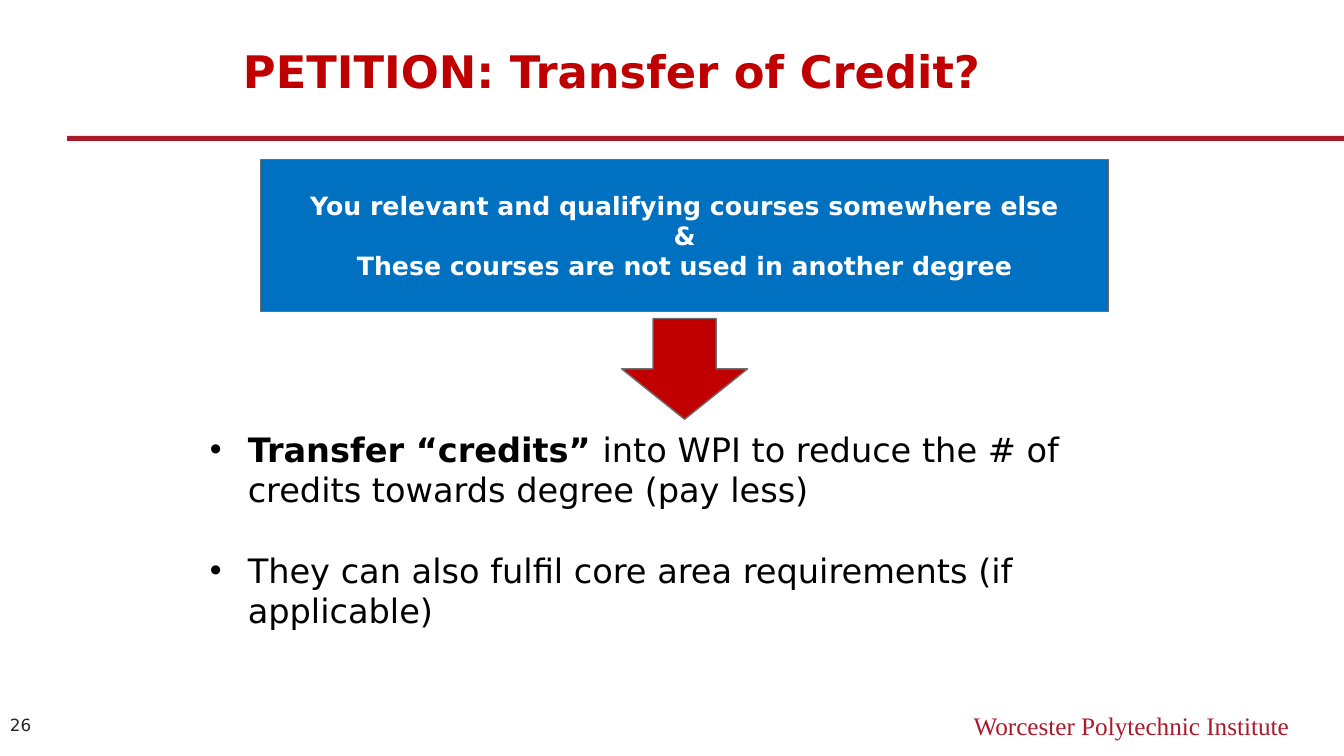
from lxml import etree
from pptx import Presentation
from pptx.dml.color import RGBColor
from pptx.enum import shapes, text
from pptx.oxml import ns
from pptx.util import Pt

CRIMSON = RGBColor(0xAB, 0x19, 0x2D)
RED = RGBColor(0xC0, 0x00, 0x00)
BLUE = RGBColor(0x00, 0x70, 0xC0)
GREY = RGBColor(0x6D, 0x6D, 0x6D)
CHARCOAL = RGBColor(0x26, 0x26, 0x26)
WHITE = RGBColor(0xFF, 0xFF, 0xFF)
BLACK = RGBColor(0x00, 0x00, 0x00)

TITLE = "PETITION: Transfer of Credit?"
CONDITIONS = [
    "You relevant and qualifying courses somewhere else",
    "&",
    "These courses are not used in another degree",
]
BENEFITS = [
    [("Transfer “credits” ", True),
     ("into WPI to reduce the # of credits towards degree (pay less)", False)],
    [("They can also fulfil core area requirements (if applicable)", False)],
]
INSTITUTE = "Worcester Polytechnic Institute"
PAGE = "26"

SLIDE_W, SLIDE_H = 960, 540
RULE_LEFT = 48
CONDITION_BOX = (186, 113.75, 606, 109)
ARROW_W, ARROW_H, ARROW_TOP = 90, 72, 227.5

deck = Presentation()
deck.slide_width, deck.slide_height = Pt(SLIDE_W), Pt(SLIDE_H)
slide = deck.slides.add_slide(deck.slide_layouts[6])


def write(frame, paragraphs, size, color, bold=False, font="DejaVu Sans",
          align=text.PP_ALIGN.LEFT, anchor=text.MSO_ANCHOR.TOP,
          wrap=True, bullet=False, gap=0):
    frame.word_wrap = wrap
    frame.vertical_anchor = anchor
    for i, runs in enumerate(paragraphs):
        line = frame.paragraphs[0] if i == 0 else frame.add_paragraph()
        line.alignment = align
        if i and gap:
            line.space_before = Pt(gap)
        if bullet:
            props = line._p.get_or_add_pPr()
            props.set("marL", str(Pt(32.4)))
            props.set("indent", str(Pt(-27)))
            etree.SubElement(props, ns.qn("a:buFont")).set("typeface", "Arial")
            etree.SubElement(props, ns.qn("a:buChar")).set("char", "•")
        for words, strong in [(runs, bold)] if isinstance(runs, str) else runs:
            run = line.add_run()
            run.text = words
            run.font.name, run.font.size = font, Pt(size)
            run.font.bold = strong
            run.font.color.rgb = color


def text_box(*box):
    return slide.shapes.add_textbox(*map(Pt, box)).text_frame


def solid(kind, box, fill, outline=None):
    part = slide.shapes.add_shape(kind, *map(Pt, box))
    part.shadow.inherit = False
    part.fill.solid()
    part.fill.fore_color.rgb = fill
    if outline is None:
        part.line.fill.background()
    else:
        part.line.color.rgb = outline
        part.line.width = Pt(1)
    return part


solid(shapes.MSO_SHAPE.RECTANGLE, (RULE_LEFT, 97, SLIDE_W - RULE_LEFT, 3.75), CRIMSON)
write(text_box(576, 504, 352, 29), [INSTITUTE], 18, CRIMSON,
      font="Times New Roman", align=text.PP_ALIGN.RIGHT)
write(text_box(0, 503.5, 48, 29), [PAGE], 12, CHARCOAL,
      anchor=text.MSO_ANCHOR.MIDDLE)
write(text_box(166.5, 27.5, 620.5, 46), [TITLE], 32, RED, bold=True)

conditions = solid(shapes.MSO_SHAPE.RECTANGLE, CONDITION_BOX, BLUE, GREY)
write(conditions.text_frame, CONDITIONS, 18, WHITE, bold=True, wrap=False,
      align=text.PP_ALIGN.CENTER, anchor=text.MSO_ANCHOR.MIDDLE)

write(text_box(137.5, 302.5, 680, 174), BENEFITS, 24, BLACK, bullet=True, gap=29)

arrow_left = CONDITION_BOX[0] + (CONDITION_BOX[2] - ARROW_W) / 2
solid(shapes.MSO_SHAPE.DOWN_ARROW, (arrow_left, ARROW_TOP, ARROW_W, ARROW_H), RED, GREY)

deck.save("out.pptx")
